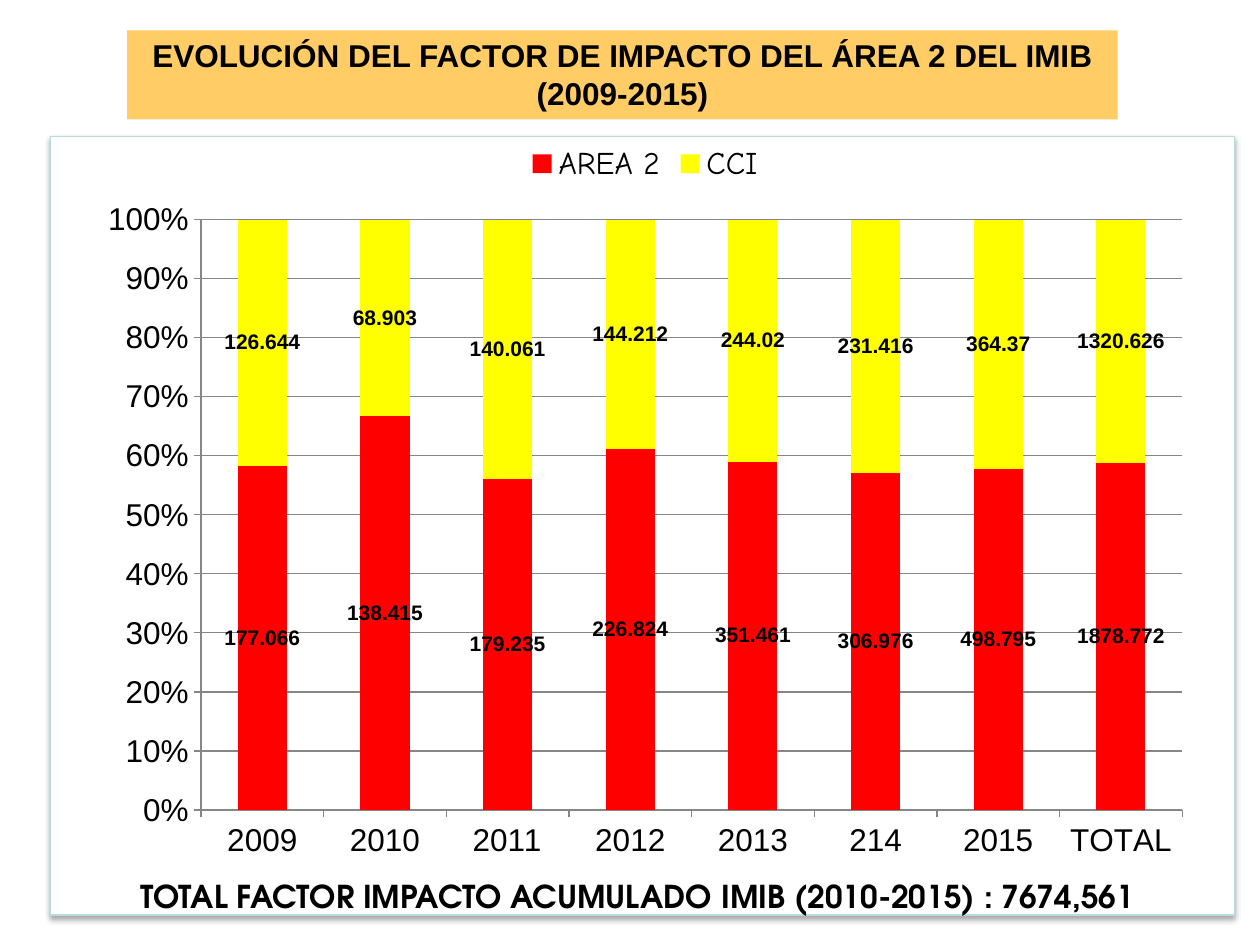
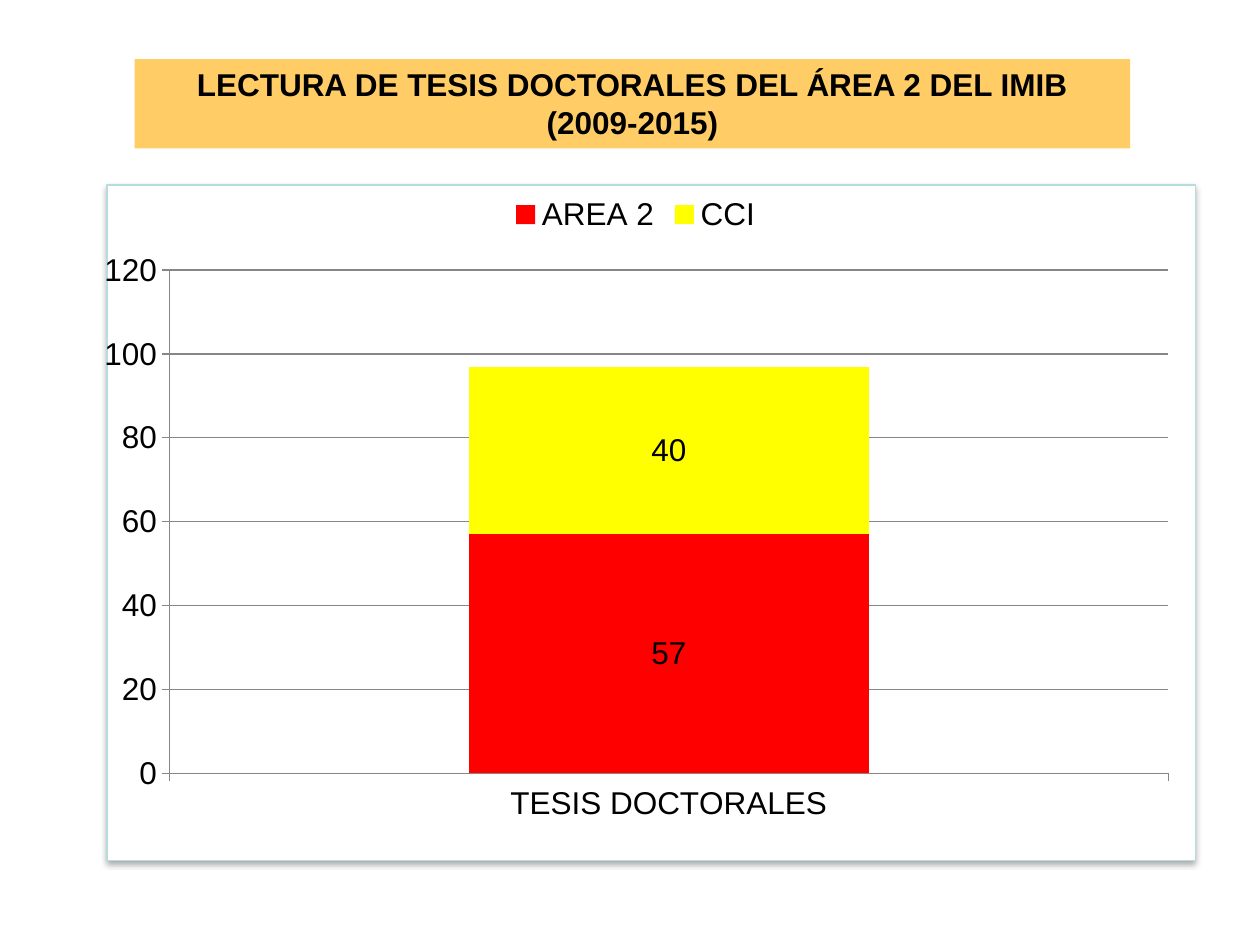
from lxml.etree import SubElement
from pptx import Presentation
from pptx.chart.data import CategoryChartData
from pptx.dml.color import RGBColor
from pptx.enum.chart import XL_CHART_TYPE, XL_LEGEND_POSITION, XL_TICK_MARK
from pptx.enum.shapes import MSO_SHAPE
from pptx.enum.text import MSO_ANCHOR, PP_ALIGN
from pptx.oxml import parse_xml
from pptx.oxml.ns import nsdecls, qn
from pptx.util import Pt

COLORS = {"text": "000000", "panel": "FFFFFF", "edge": "B6DCDF", "band": "FFCC66",
          "grid": "868686", "AREA 2": "FF0000", "CCI": "FFFF00"}
FONT = "Arial"
SIZE = 18

SLIDES = [
    {
        "title": "EVOLUCIÓN DEL FACTOR DE IMPACTO DEL ÁREA 2 DEL IMIB (2009-2015)",
        "title_at": (72.7, 17.3, 566, 51),
        "panel_at": (28.8, 77.8, 676.8, 445),
        "chart_at": (49, 74.2, 639.4, 424.8),
        "plot_at": (0.103, 0.121, 0.877, 0.794),
        "type": XL_CHART_TYPE.COLUMN_STACKED_100,
        "categories": ["2009", "2010", "2011", "2012", "2013", "214", "2015", "TOTAL"],
        "series": {
            "AREA 2": [177.066, 138.415, 179.235, 226.824, 351.461, 306.976, 498.795, 1878.772],
            "CCI": [126.644, 68.903, 140.061, 144.212, 244.02, 231.416, 364.37, 1320.626],
        },
        "axis": (1, 0.1, "0%"),
        "labels": (12, True),
        "legend_font": "Comic Neue",
        "total": "TOTAL FACTOR IMPACTO ACUMULADO IMIB (2010-2015) : 7674,561",
        "total_at": (12.2, 497.5, 704.2, 28.8),
    },
    {
        "title": "LECTURA DE TESIS DOCTORALES DEL ÁREA 2 DEL IMIB (2009-2015)",
        "title_at": (77, 33.8, 568.8, 51),
        "panel_at": (61.2, 105.8, 622, 386),
        "chart_at": (46.8, 103.7, 632.9, 373),
        "plot_at": (0.079, 0.136, 0.902, 0.771),
        "type": XL_CHART_TYPE.COLUMN_STACKED,
        "categories": ["TESIS DOCTORALES"],
        "series": {"AREA 2": [57], "CCI": [40]},
        "axis": (120, 20, "General"),
        "labels": (SIZE, False),
        "legend_font": FONT,
    },
]


def color(name):
    return RGBColor.from_string(COLORS[name])


def points(place):
    return [Pt(value) for value in place]


def style_font(font, size=SIZE, bold=False, name=FONT):
    font.size, font.bold, font.name = Pt(size), bold, name
    font.color.rgb = color("text")


def write(shape, text, font_name=FONT):
    frame = shape.text_frame
    frame.word_wrap = True
    frame.vertical_anchor = MSO_ANCHOR.TOP
    frame.text = text
    para = frame.paragraphs[0]
    para.alignment = PP_ALIGN.CENTER
    style_font(para.runs[0].font, bold=True, name=font_name)


def add_box(page, place, fill):
    box = page.shapes.add_shape(MSO_SHAPE.RECTANGLE, *points(place))
    box.shadow.inherit = False
    box.fill.solid()
    box.fill.fore_color.rgb = color(fill)
    box.line.fill.background()
    return box


def add_panel(page, place):
    panel = add_box(page, place, "panel")
    panel.line.color.rgb = color("edge")
    panel.line.width = Pt(0.75)
    effects = panel._element.spPr.find(qn("a:effectLst"))
    effects.append(parse_xml(
        f'<a:outerShdw {nsdecls("a")} blurRad="{Pt(3.1)}" dist="{Pt(1.8)}" dir="5400000" '
        'rotWithShape="0"><a:srgbClr val="000000"><a:alpha val="35000"/></a:srgbClr></a:outerShdw>'))


def place_plot(chart, place):
    area = chart._chartSpace.chart.plotArea
    for old in area.findall(qn("c:layout")):
        area.remove(old)
    layout = parse_xml(f'<c:layout {nsdecls("c")}/>')
    manual = SubElement(layout, qn("c:manualLayout"))
    settings = [("layoutTarget", "inner"), ("xMode", "edge"), ("yMode", "edge")]
    for tag, value in settings + list(zip("xywh", place)):
        SubElement(manual, qn(f"c:{tag}")).set("val", str(value))
    area.insert(0, layout)


def style_axes(chart, maximum, step, number_format):
    values = chart.value_axis
    values.minimum_scale, values.maximum_scale, values.major_unit = 0, maximum, step
    values.tick_labels.number_format = number_format
    values.tick_labels.number_format_is_linked = False
    values.has_major_gridlines = True
    for axis in (chart.category_axis, values):
        axis.major_tick_mark = XL_TICK_MARK.OUTSIDE
        axis.minor_tick_mark = XL_TICK_MARK.NONE
        style_font(axis.tick_labels.font)
    for part in (chart.category_axis, values, values.major_gridlines):
        part.format.line.color.rgb = color("grid")
        part.format.line.width = Pt(0.75)


def add_chart(page, content):
    data = CategoryChartData()
    data.categories = content["categories"]
    for name, values in content["series"].items():
        data.add_series(name, values)
    chart = page.shapes.add_chart(content["type"], *points(content["chart_at"]), data).chart
    style_font(chart.font)
    chart.has_title = False
    chart.has_legend = True
    chart.legend.position = XL_LEGEND_POSITION.TOP
    chart.legend.include_in_layout = False
    style_font(chart.legend.font, name=content["legend_font"])
    style_axes(chart, *content["axis"])
    place_plot(chart, content["plot_at"])
    plot = chart.plots[0]
    plot.gap_width, plot.overlap = 150, 100
    plot.vary_by_categories = False
    for series in plot.series:
        series.format.fill.solid()
        series.format.fill.fore_color.rgb = color(series.name)
        series.data_labels.show_value = True
        style_font(series.data_labels.font, *content["labels"])


def main():
    deck = Presentation()
    deck.slide_width, deck.slide_height = Pt(720), Pt(540)
    for content in SLIDES:
        page = deck.slides.add_slide(deck.slide_layouts[6])
        add_panel(page, content["panel_at"])
        add_chart(page, content)
        write(add_box(page, content["title_at"], "band"), content["title"])
        if "total" in content:
            box = page.shapes.add_textbox(*points(content["total_at"]))
            write(box, content["total"], "TeX Gyre Adventor")
    deck.save("out.pptx")


if __name__ == "__main__":
    main()
